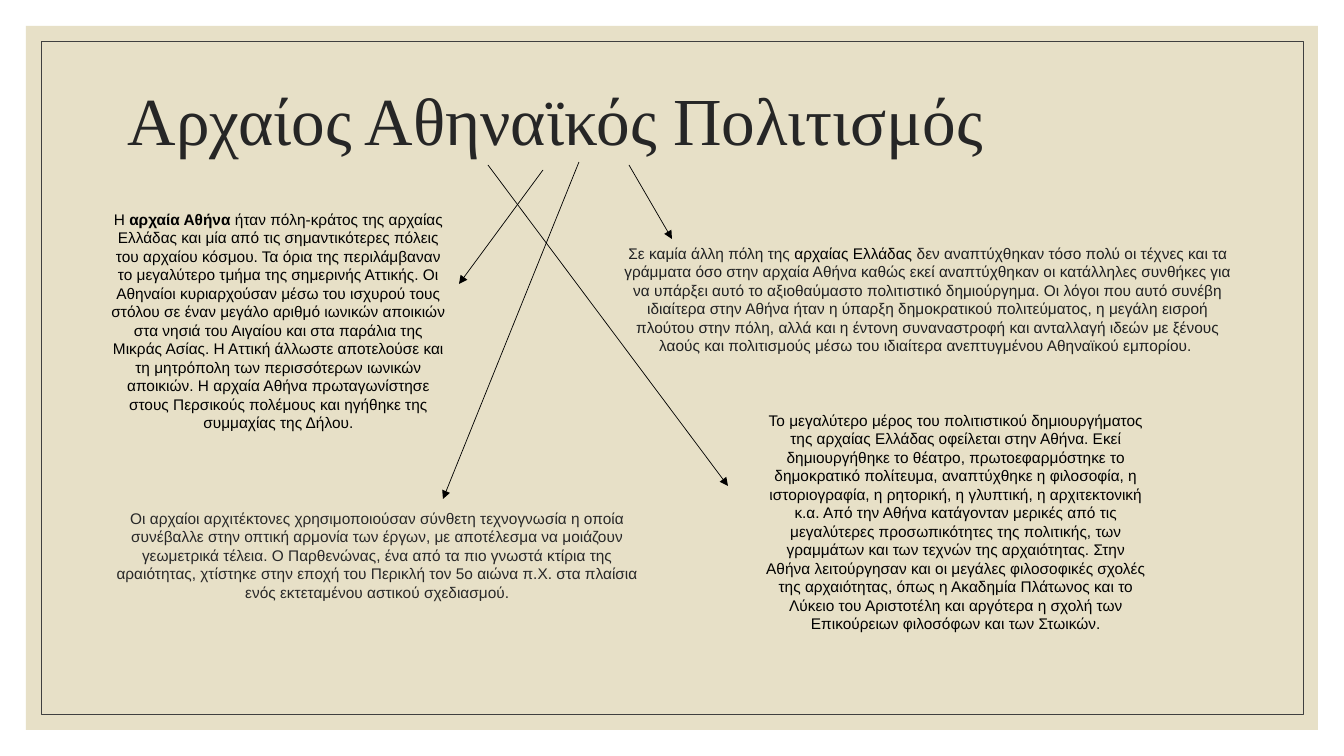
from lxml import etree
from pptx import Presentation
from pptx.dml.color import RGBColor
from pptx.enum.shapes import MSO_CONNECTOR, MSO_SHAPE
from pptx.enum.text import MSO_ANCHOR, PP_ALIGN
from pptx.oxml.ns import qn
from pptx.util import Emu, Pt

RECTANGLE = MSO_SHAPE.RECTANGLE
STRAIGHT = MSO_CONNECTOR.STRAIGHT
TOP, MIDDLE = MSO_ANCHOR.TOP, MSO_ANCHOR.MIDDLE
LEFT, CENTER = PP_ALIGN.LEFT, PP_ALIGN.CENTER

BLACK, INK, SLATE = "000000", "202122", "282828"


def px(length):
    return Emu(round(length * 914400 / 100.8))


def color(value):
    return RGBColor.from_string(value)


class Slide:
    sand, frame, heading = "E7E0C7", "404040", "262626"
    body_font, title_font = "Arial", "Times New Roman"
    body_size, title_size, thin = 11, 48, 0.5

    def __init__(self, deck):
        self.page = deck.slides.add_slide(deck.slide_layouts[6])

    def rectangle(self, area, fill=None, line=None):
        box = self.page.shapes.add_shape(RECTANGLE, *map(px, area))
        box.shadow.inherit = False
        if fill:
            box.fill.solid()
            box.fill.fore_color.rgb = color(fill)
        else:
            box.fill.background()
        if line:
            box.line.color.rgb = color(line)
            box.line.width = Pt(self.thin)
        else:
            box.line.fill.background()

    def text(self, area, spans, font, size, align, anchor=TOP, spacing=None):
        box = self.page.shapes.add_textbox(*map(px, area))
        box.text_frame.word_wrap = True
        box.text_frame.vertical_anchor = anchor
        para = box.text_frame.paragraphs[0]
        para.alignment = align
        if spacing:
            para.line_spacing = spacing
        for words, ink, bold in spans:
            span = para.add_run()
            span.text = words
            span.font.name = font
            span.font.size = Pt(size)
            span.font.bold = bold
            span.font.color.rgb = color(ink)
        return para

    def title(self, area, words):
        self.text(area, [(words, self.heading, False)], self.title_font,
                  self.title_size, LEFT, MIDDLE, 0.9)

    def passage(self, area, spans, before=0):
        para = self.text(area, spans, self.body_font, self.body_size, CENTER)
        para.space_before = Pt(before)

    def arrow(self, start, end):
        line = self.page.shapes.add_connector(STRAIGHT, *map(px, start + end))
        line.line.color.rgb = color(BLACK)
        line.line.width = Pt(self.thin)
        head = etree.SubElement(line.line._get_or_add_ln(), qn("a:tailEnd"))
        head.set("type", "triangle")
        etree.SubElement(line._element.spPr, qn("a:effectLst"))


def main():
    deck = Presentation()
    deck.slide_width, deck.slide_height = px(1344), px(756)
    slide = Slide(deck)

    # Background panel and frame
    slide.rectangle((26, 26, 1292, 704), fill=slide.sand)
    slide.rectangle((41, 41, 1262, 673), line=slide.frame)

    # Title
    slide.title((118, 48, 1109, 151), "Αρχαίος Αθηναϊκός Πολιτισμός")

    # City-state
    slide.passage((98, 205, 361, 311), [
        ("Η ", BLACK, False),
        ("αρχαία Αθήνα", BLACK, True),
        (" ήταν πόλη-κράτος της αρχαίας Ελλάδας και μία από τις "
         "σημαντικότερες πόλεις του αρχαίου κόσμου. Τα όρια της περιλάμβαναν "
         "το μεγαλύτερο τμήμα της σημερινής Αττικής. Οι Αθηναίοι "
         "κυριαρχούσαν μέσω του ισχυρού τους στόλου σε έναν μεγάλο αριθμό "
         "ιωνικών αποικιών στα νησιά του Αιγαίου και στα παράλια της Μικράς "
         "Ασίας. Η Αττική άλλωστε αποτελούσε και τη μητρόπολη των "
         "περισσότερων ιωνικών αποικιών. Η αρχαία Αθήνα πρωταγωνίστησε "
         "στους Περσικούς πολέμους και ηγήθηκε της συμμαχίας της Δήλου.",
         BLACK, False),
    ], before=9)

    # Arts and letters
    slide.passage((609, 239, 638, 122), [
        ("Σε καμία άλλη πόλη της ", INK, False),
        ("αρχαίας Ελλάδας ", BLACK, False),
        ("δεν αναπτύχθηκαν τόσο πολύ οι τέχνες και τα γράμματα όσο στην "
         "αρχαία Αθήνα καθώς εκεί αναπτύχθηκαν οι κατάλληλες συνθήκες για να "
         "υπάρξει αυτό το αξιοθαύμαστο πολιτιστικό δημιούργημα. Οι λόγοι που "
         "αυτό συνέβη ιδιαίτερα στην Αθήνα ήταν η ύπαρξη δημοκρατικού "
         "πολιτεύματος, η μεγάλη εισροή πλούτου στην πόλη, αλλά και η έντονη "
         "συναναστροφή και ανταλλαγή ιδεών με ξένους λαούς και πολιτισμούς "
         "μέσω του ιδιαίτερα ανεπτυγμένου Αθηναϊκού εμπορίου. ", INK, False),
    ])

    # Legacy
    slide.passage((756, 406, 400, 234), [
        ("Το μεγαλύτερο μέρος του πολιτιστικού δημιουργήματος της αρχαίας "
         "Ελλάδας οφείλεται στην Αθήνα. Εκεί δημιουργήθηκε το θέατρο, "
         "πρωτοεφαρμόστηκε το δημοκρατικό πολίτευμα, αναπτύχθηκε "
         "η φιλοσοφία, η ιστοριογραφία, η ρητορική, η γλυπτική, "
         "η αρχιτεκτονική κ.α. Από την Αθήνα κατάγονταν μερικές από τις "
         "μεγαλύτερες προσωπικότητες της πολιτικής, των γραμμάτων και "
         "των τεχνών της αρχαιότητας. Στην Αθήνα λειτούργησαν και οι μεγάλες "
         "φιλοσοφικές σχολές της αρχαιότητας, όπως η Ακαδημία Πλάτωνος και "
         "το Λύκειο του Αριστοτέλη και αργότερα η σχολή των Επικούρειων "
         "φιλοσόφων και των Στωικών.", BLACK, False),
    ])

    # Architecture
    slide.passage((98, 504, 559, 104), [
        ("Οι αρχαίοι αρχιτέκτονες χρησιμοποιούσαν σύνθετη τεχνογνωσία η "
         "οποία συνέβαλλε στην οπτική αρμονία των έργων, με αποτέλεσμα να "
         "μοιάζουν γεωμετρικά τέλεια. Ο Παρθενώνας, ένα από τα πιο γνωστά "
         "κτίρια της αραιότητας, χτίστηκε στην εποχή του Περικλή τον 5ο "
         "αιώνα π.Χ. στα πλαίσια ενός εκτεταμένου αστικού σχεδιασμού.",
         SLATE, False),
    ])

    # Arrows from the title to the passages
    for start, end in (((543, 170), (459, 284)), ((579, 162), (443, 499)),
                       ((488, 165), (728, 486)), ((629, 165), (672, 239))):
        slide.arrow(start, end)

    deck.save("out.pptx")


if __name__ == "__main__":
    main()
